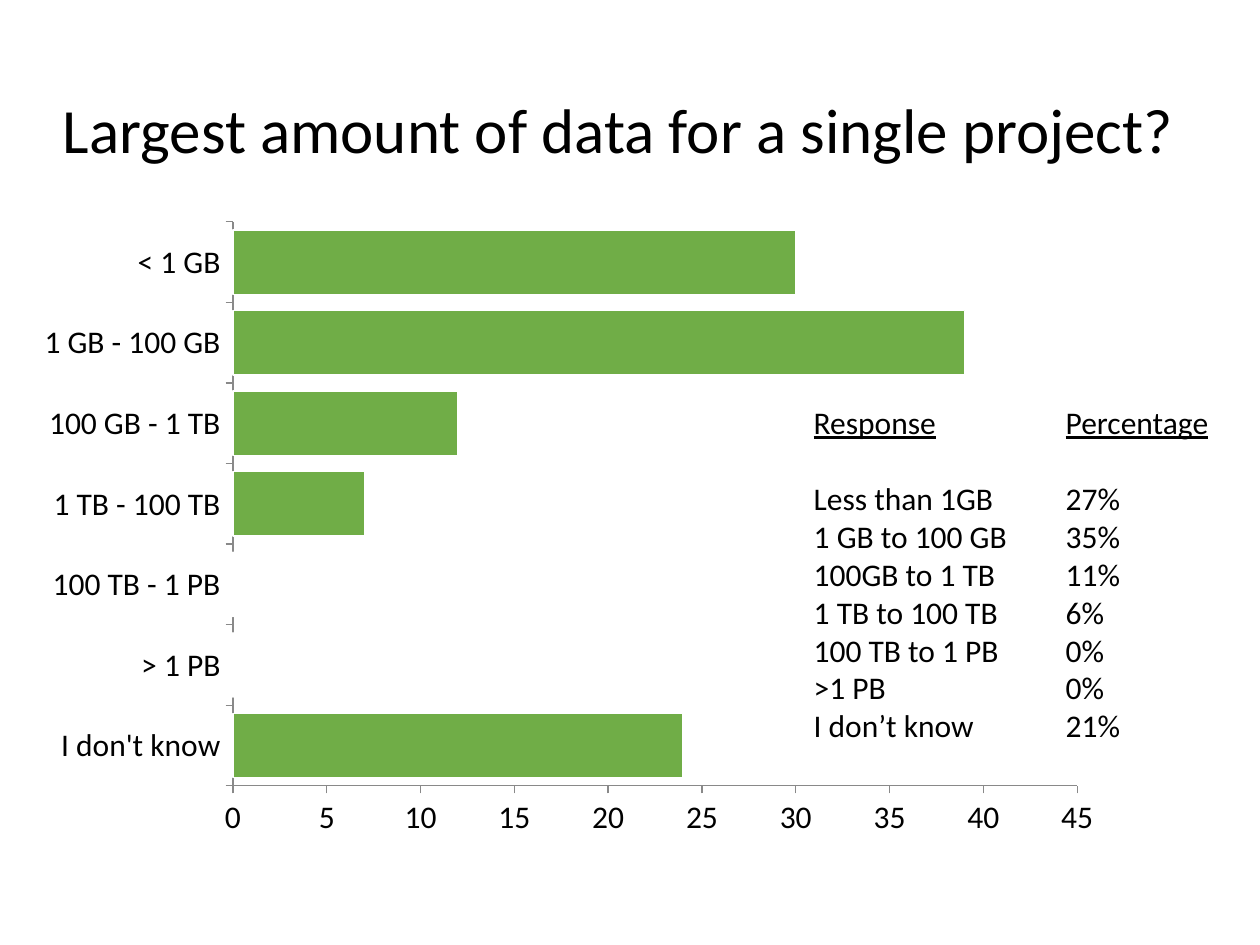
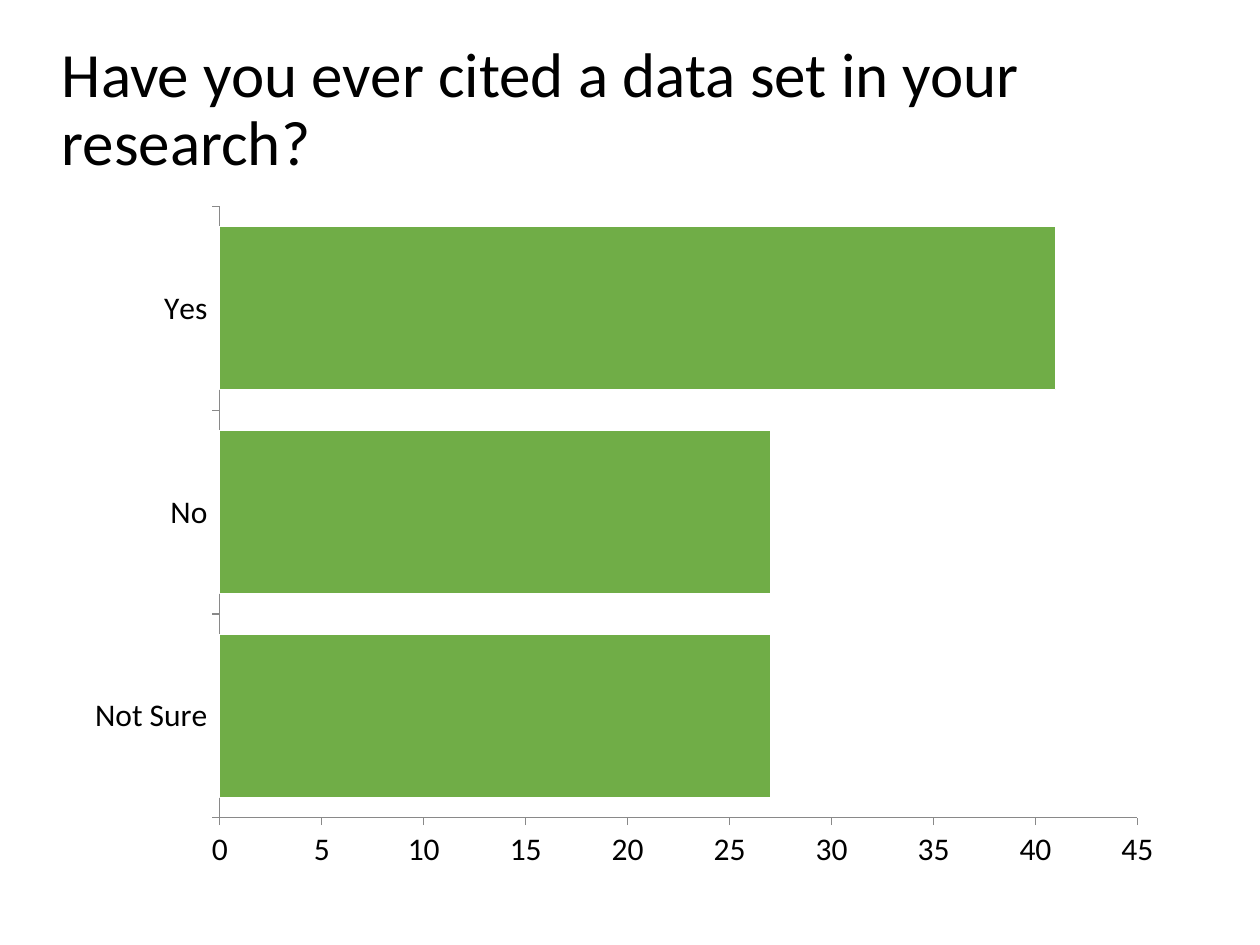
from dataclasses import dataclass
from typing import Any, NamedTuple

from lxml import etree
from pptx import Presentation
from pptx.chart.data import CategoryChartData
from pptx.dml.color import RGBColor
from pptx.enum.chart import XL_CHART_TYPE, XL_TICK_MARK
from pptx.enum.shapes import MSO_SHAPE
from pptx.enum.text import MSO_ANCHOR, PP_ALIGN
from pptx.oxml.ns import qn
from pptx.util import Inches, Pt

BAR_CLUSTERED = XL_CHART_TYPE.BAR_CLUSTERED
TICK_OUTSIDE, TICK_NONE = XL_TICK_MARK.OUTSIDE, XL_TICK_MARK.NONE
ROUNDED_RECTANGLE = MSO_SHAPE.ROUNDED_RECTANGLE
TOP, LEFT = MSO_ANCHOR.TOP, PP_ALIGN.LEFT

SLIDE_WIDTH, SLIDE_HEIGHT = Inches(10), Inches(7.5)
BLANK_LAYOUT = 6
BLACK, WHITE, GREEN, GRAY = "000000", "FFFFFF", "70AD47", "898989"
TITLE_FONT = {"name": "Calibri", "size": Pt(36)}
BODY_FONT = {"name": "Calibri", "size": Pt(18)}
PERCENTAGE_TAB = Inches(2)
NO_MARGINS = {f"margin_{side}": 0 for side in ("left", "top", "right", "bottom")}


class Box(NamedTuple):
    """A place on the slide, in percent of the slide's width and height."""
    left: float
    top: float
    width: float
    height: float

    def lengths(self) -> tuple[int, int, int, int]:
        return (int(SLIDE_WIDTH * self.left / 100), int(SLIDE_HEIGHT * self.top / 100),
                int(SLIDE_WIDTH * self.width / 100), int(SLIDE_HEIGHT * self.height / 100))


@dataclass(frozen=True)
class Question:
    title: str
    title_box: Box
    chart_box: Box
    answers: dict[str, int]


DATA_SIZE = Question(
    "Largest amount of data for a single project?",
    Box(5, 10.53, 90, 18), Box(1.8, 22.13, 86.7, 67.73),
    {"I don't know": 24, "> 1 PB": 0, "100 TB - 1 PB": 0, "1 TB - 100 TB": 7,
     "100 GB - 1 TB": 12, "1 GB - 100 GB": 39, "< 1 GB": 30},
)
CITATION = Question(
    "Have you ever cited a data set in your research?",
    Box(4.9, 4.53, 95.1, 13.73), Box(5.8, 20.4, 87.5, 72.93),
    {"Not Sure": 27, "No": 27, "Yes": 41},
)
PERCENTAGES_BOX = Box(63.6, 42, 43.3, 37.73)
PERCENTAGES = [
    ("Response", "Percentage"),
    ("Less than 1GB", "27%"),
    ("1 GB to 100 GB", "35%"),
    ("100GB to 1 TB", "11%"),
    ("1 TB to 100 TB", "6%"),
    ("100 TB to 1 PB", "0%"),
    (">1 PB", "0%"),
    ("I don’t know", "21%"),
]


def color(value: str) -> RGBColor:
    return RGBColor.from_string(value)


def apply(target: Any, values: dict[str, Any]) -> None:
    for name, value in values.items():
        setattr(target, name, value)


def style_font(font: Any, values: dict[str, Any]) -> None:
    apply(font, values)
    font.color.rgb = color(BLACK)


def add_title(slide: Any, text: str, box: Box) -> None:
    shape = slide.shapes.add_shape(ROUNDED_RECTANGLE, *box.lengths())
    shape.adjustments[0] = 0
    shape.shadow.inherit = False
    shape.fill.background()
    shape.line.fill.background()
    apply(shape.text_frame, NO_MARGINS | {"word_wrap": True, "vertical_anchor": TOP})
    paragraph = shape.text_frame.paragraphs[0]
    apply(paragraph, {"text": text, "alignment": LEFT, "line_spacing": 0.9})
    style_font(paragraph.runs[0].font, TITLE_FONT)


def add_answer_chart(slide: Any, answers: dict[str, int], box: Box) -> None:
    data = CategoryChartData()
    data.categories = list(answers)
    data.add_series("Series 1", list(answers.values()))
    chart = slide.shapes.add_chart(BAR_CLUSTERED, *box.lengths(), data).chart
    apply(chart, {"has_legend": False, "has_title": False})
    style_font(chart.font, BODY_FONT)

    for axis in (chart.category_axis, chart.value_axis):
        apply(axis, {"has_major_gridlines": False, "major_tick_mark": TICK_OUTSIDE,
                     "minor_tick_mark": TICK_NONE})
        axis.format.line.color.rgb = color(GRAY)
        axis.format.line.width = Pt(0.75)
    apply(chart.value_axis, {"minimum_scale": 0, "maximum_scale": 45, "major_unit": 5})

    plot = chart.plots[0]
    apply(plot, {"gap_width": 25, "vary_by_categories": False})
    bars = plot.series[0].format
    bars.fill.solid()
    bars.fill.fore_color.rgb = color(GREEN)
    bars.line.color.rgb = color(WHITE)
    bars.line.width = Pt(0.75)


def add_tab_stop(paragraph: Any, position: int) -> None:
    properties = paragraph._p.get_or_add_pPr()
    tab_list = etree.SubElement(properties, qn("a:tabLst"))
    etree.SubElement(tab_list, qn("a:tab"), pos=str(int(position)), algn="l")


def add_percentages(slide: Any, rows: list[tuple[str, str]], box: Box) -> None:
    """Set the rows in two columns by a tab stop, under an underlined heading."""
    frame = slide.shapes.add_textbox(*box.lengths()).text_frame
    frame.word_wrap = True
    for index, row in enumerate(rows):
        is_heading = index == 0
        paragraph = frame.paragraphs[0] if is_heading else frame.add_paragraph()
        paragraph.space_after = Pt(22 if is_heading else 0)
        add_tab_stop(paragraph, PERCENTAGE_TAB)
        run = paragraph.add_run()
        run.text = "\t".join(row)
        style_font(run.font, BODY_FONT | {"underline": is_heading})


def add_question_slide(presentation: Any, question: Question) -> Any:
    slide = presentation.slides.add_slide(presentation.slide_layouts[BLANK_LAYOUT])
    add_title(slide, question.title, question.title_box)
    add_answer_chart(slide, question.answers, question.chart_box)
    return slide


def main() -> None:
    presentation = Presentation()
    apply(presentation, {"slide_width": SLIDE_WIDTH, "slide_height": SLIDE_HEIGHT})
    data_size_slide = add_question_slide(presentation, DATA_SIZE)
    add_percentages(data_size_slide, PERCENTAGES, PERCENTAGES_BOX)
    add_question_slide(presentation, CITATION)
    presentation.save("out.pptx")


if __name__ == "__main__":
    main()
